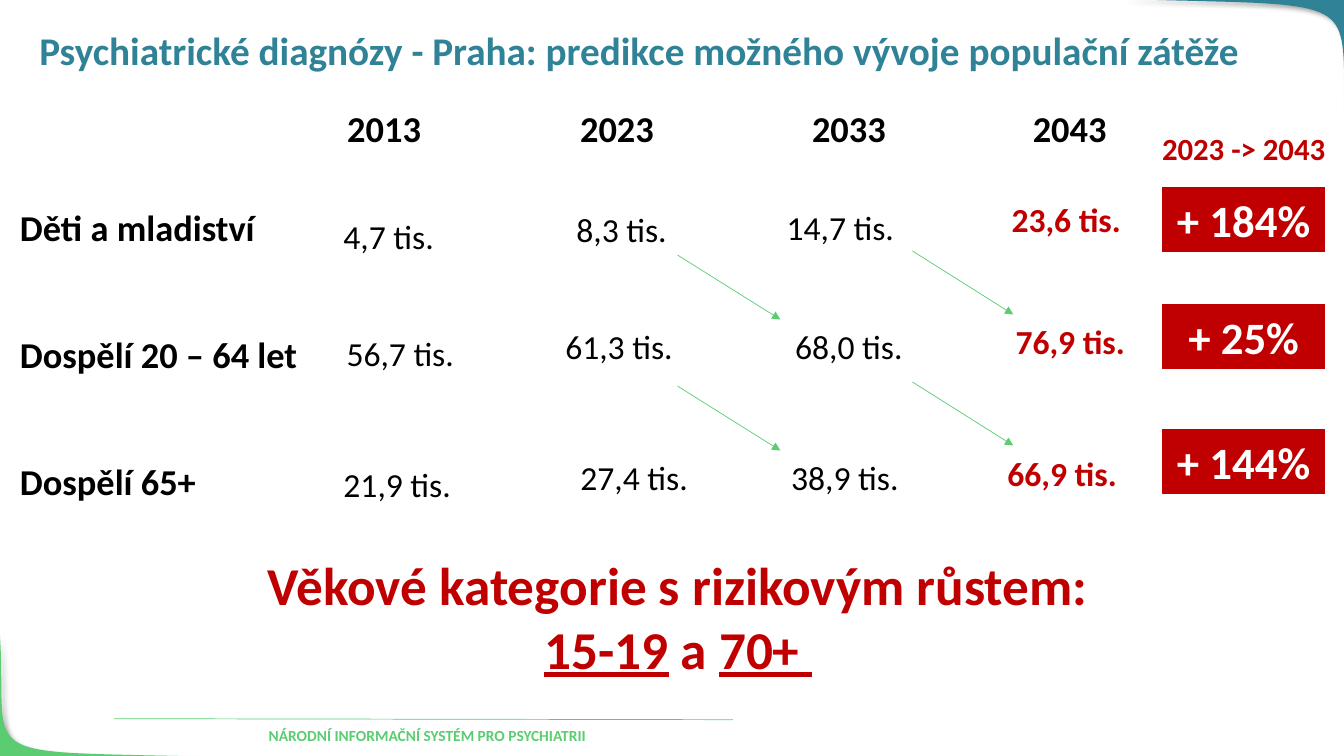
from lxml import etree
from pptx import Presentation
from pptx.dml.color import RGBColor
from pptx.enum.shapes import MSO_CONNECTOR as CONN, MSO_SHAPE as SHAPE
from pptx.enum.text import MSO_ANCHOR as ANCHOR, PP_ALIGN as ALIGN
from pptx.oxml.ns import qn
from pptx.util import Inches, Pt

FONT = "Calibri"
BLACK, WHITE, RED, GREEN, TEAL = "000000", "FFFFFF", "C00000", "5BCC72", "308297"

YEARS = [("2013", 3.3), ("2023", 5.61), ("2033", 7.91), ("2043", 10.1)]
GROUPS = [
    ("Děti a mladiství", 1.99, "+ 184%", 1.86,
     [("4,7 tis.", 3.3, 2.09, 1.11), ("8,3 tis.", 5.61, 2.02, 1.11),
      ("14,7 tis.", 7.7, 2, 1.27), ("23,6 tis.", 9.87, 1.92, 1.41)]),
    ("Dospělí 20 – 64 let", 3.25, "+ 25%", 3.02,
     [("56,7 tis.", 3.3, 3.25, 1.34), ("61,3 tis.", 5.42, 3.18, 1.44),
      ("68,0 tis.", 7.74, 3.18, 1.36), ("76,9 tis.", 9.91, 3.13, 1.41)]),
    ("Dospělí 65+", 4.51, "+ 144%", 4.26,
     [("21,9 tis.", 3.26, 4.55, 1.36), ("27,4 tis.", 5.57, 4.48, 1.44),
      ("38,9 tis.", 7.7, 4.48, 1.36), ("66,9 tis.", 9.83, 4.44, 1.41)]),
]
ARROWS = [(6.72, 2.53, 7.74, 3.17), (9.05, 2.49, 10.05, 3.12)]
ROW_STEP = 1.3


def rgb(color):
    return RGBColor.from_string(color)


def style(p, size, color, bold=True, align=ALIGN.CENTER):
    p.alignment = align
    f = p.font
    f.name, f.size, f.bold = FONT, Pt(size), bold
    f.color.rgb = rgb(color)


def add_text(s, text, x, y, w, h, size, color, bold=True, align=ALIGN.CENTER):
    tf = s.shapes.add_textbox(Inches(x), Inches(y), Inches(w), Inches(h)).text_frame
    tf.word_wrap = True
    if align == ALIGN.CENTER:
        tf.margin_left = tf.margin_right = 0
    p = tf.paragraphs[0]
    p.text = text
    style(p, size, color, bold, align)
    return tf


def add_title(s, text):
    sp = s.shapes.title
    sp.left, sp.top, sp.width, sp.height = map(Inches, (0.29, 0.26, 12.76, 0.63))
    tf = sp.text_frame
    tf.vertical_anchor = ANCHOR.TOP
    p = tf.paragraphs[0]
    p.text = text
    p.line_spacing = 0.9
    style(p, 28, TEAL, align=ALIGN.LEFT)


def add_badge(s, text, y):
    sp = s.shapes.add_shape(SHAPE.RECTANGLE, Inches(11.53), Inches(y), Inches(1.61), Inches(0.64))
    sp.shadow.inherit = False
    sp.fill.solid()
    sp.fill.fore_color.rgb = rgb(RED)
    sp.line.color.rgb = rgb(RED)
    sp.line.width = Pt(0.75)
    tf = sp.text_frame
    tf.vertical_anchor = ANCHOR.MIDDLE
    tf.margin_left = tf.margin_right = 0
    p = tf.paragraphs[0]
    p.text = text
    style(p, 32, WHITE)


def add_line(s, x1, y1, x2, y2, arrow=False):
    c = s.shapes.add_connector(CONN.STRAIGHT, Inches(x1), Inches(y1), Inches(x2), Inches(y2))
    c.line.color.rgb = rgb(GREEN)
    c.line.width = Pt(0.5)
    if arrow:
        etree.SubElement(c.line._get_or_add_ln(), qn("a:tailEnd"), type="triangle")
    etree.SubElement(c._element.spPr, qn("a:effectLst"))


def curve_points(curve, steps=40):
    points = []
    for i in range(steps + 1):
        t = i / steps
        weights = ((1 - t) ** 3, 3 * t * (1 - t) ** 2, 3 * t * t * (1 - t), t ** 3)
        points.append(tuple(Inches(sum(k * pt[axis] for k, pt in zip(weights, curve)))
                            for axis in (0, 1)))
    return points


def add_corner(s, curve, corner, color):
    start, *rest = curve_points(curve)
    fb = s.shapes.build_freeform(*start)
    fb.add_line_segments(rest + [tuple(map(Inches, corner))], close=True)
    sp = fb.convert_to_shape()
    sp.fill.solid()
    sp.fill.fore_color.rgb = rgb(color)
    sp.line.fill.background()
    sp.shadow.inherit = False
    effects = sp._element.spPr.find(qn("a:effectLst"))
    shadow = etree.SubElement(effects, qn("a:outerShdw"), blurRad=str(Pt(4)),
                              dist=str(Pt(3)), dir="2700000", rotWithShape="0")
    shade = etree.SubElement(shadow, qn("a:srgbClr"), val=BLACK)
    etree.SubElement(shade, qn("a:alpha"), val="40000")


def add_conclusion(s):
    tf = add_text(s, "Věkové kategorie s rizikovým růstem:", 2.49, 5.43, 8.47, 1.38, 38, RED)
    p = tf.add_paragraph()
    style(p, 38, RED)
    for text, underline in (("15-19", True), (" a ", False), ("70+ ", True)):
        r = p.add_run()
        r.text = text
        r.font.underline = underline


def main():
    prs = Presentation()
    prs.slide_width, prs.slide_height = Inches(13.33), Inches(7.5)
    s = prs.slides.add_slide(prs.slide_layouts[5])

    add_corner(s, [(2.13, 7.51), (-0.34, 7.44), (0.08, 7.59), (0, 6.3)], (-0.01, 7.51), GREEN)
    add_corner(s, [(11.11, -0.01), (13.7, 0.07), (13.26, -0.1), (13.35, 1.42)],
               (13.35, -0.01), TEAL)
    add_line(s, 1.13, 7.13, 7.27, 7.14)
    add_text(s, "NÁRODNÍ INFORMAČNÍ SYSTÉM PRO PSYCHIATRII", 1.49, 7.15, 5.5, 0.29, 11, GREEN)
    add_title(s, "Psychiatrické diagnózy - Praha: predikce možného vývoje populační zátěže")

    for year, x in YEARS:
        add_text(s, year, x, 1, 1.02, 0.54, 26, BLACK)
    add_text(s, "2023 -> 2043", 11.31, 1.24, 2.05, 0.47, 22, RED)

    for label, label_y, change, badge_y, values in GROUPS:
        add_text(s, label, 0.1, label_y, 3.06, 0.54, 26, BLACK, align=ALIGN.LEFT)
        for value, x, y, w in values:
            last = value == values[-1][0]
            add_text(s, value, x, y, w, 0.5, 24, RED if last else BLACK, bold=last)
        add_badge(s, change, badge_y)

    for drop in (0, ROW_STEP):
        for x1, y1, x2, y2 in ARROWS:
            add_line(s, x1, y1 + drop, x2, y2 + drop, arrow=True)
    add_conclusion(s)
    prs.save("out.pptx")


if __name__ == "__main__":
    main()
